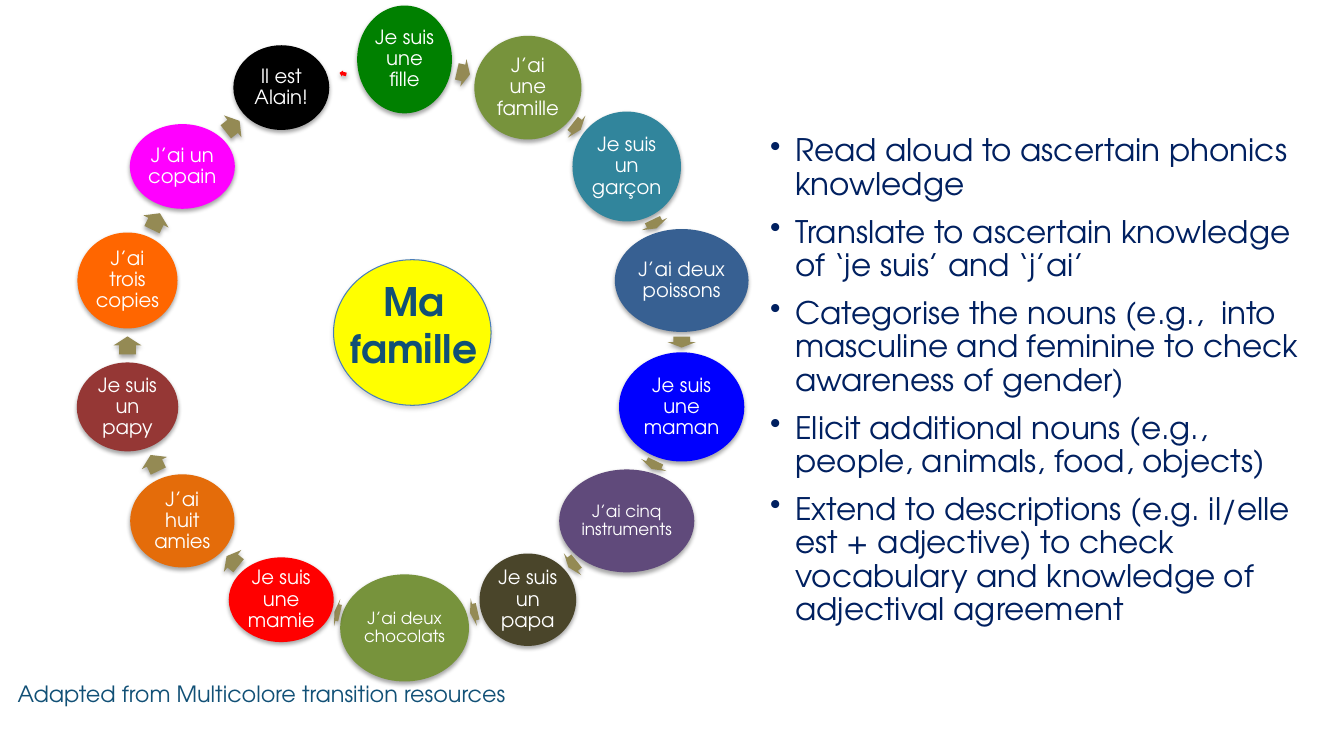
import math

import pptx
import pptx.dml.color
import pptx.enum.shapes
import pptx.enum.text
import pptx.oxml
import pptx.oxml.ns
import pptx.util

Pt = pptx.util.Pt
RGBColor = pptx.dml.color.RGBColor
SHAPE = pptx.enum.shapes.MSO_SHAPE
ALIGN = pptx.enum.text.PP_ALIGN
ANCHOR = pptx.enum.text.MSO_ANCHOR

FONT = "TeX Gyre Adventor"
WHITE = RGBColor(0xFF, 0xFF, 0xFF)
BLACK = RGBColor(0x00, 0x00, 0x00)
GREY = RGBColor(0x80, 0x80, 0x80)
YELLOW = RGBColor(0xFF, 0xFF, 0x00)
OUTLINE = RGBColor(0x4A, 0x7E, 0xBB)
TEAL = RGBColor(0x11, 0x50, 0x76)
NAVY = RGBColor(0x00, 0x20, 0x60)
KHAKI = RGBColor(0x94, 0x8A, 0x54)
RED = RGBColor(0xFF, 0x00, 0x00)
GREEN = RGBColor(0x00, 0x80, 0x00)
OLIVE = RGBColor(0x77, 0x93, 0x3C)
AQUA = RGBColor(0x31, 0x85, 0x9C)
STEEL = RGBColor(0x37, 0x60, 0x92)
BLUE = RGBColor(0x00, 0x00, 0xFF)
PURPLE = RGBColor(0x60, 0x4A, 0x7B)
DARK_TAN = RGBColor(0x4A, 0x45, 0x2A)
AMBER = RGBColor(0xE4, 0x6C, 0x0A)
BRICK = RGBColor(0x95, 0x37, 0x35)
ORANGE = RGBColor(0xFF, 0x66, 0x00)
MAGENTA = RGBColor(0xFF, 0x00, 0xFF)

# Clockwise from the top: phrase, fill, width, height, text size
PHRASES = [
    ("Je suis une fille", GREEN, 67.7, 77, 14),
    ("J’ai une famille", OLIVE, 76.5, 74, 14),
    ("Je suis un garçon", AQUA, 77.5, 78.5, 14),
    ("J’ai deux poissons", STEEL, 95.5, 73.5, 14),
    ("Je suis une maman", BLUE, 89.5, 78, 14),
    ("J’ai cinq instruments", PURPLE, 96.5, 73.5, 12),
    ("Je suis un papa", DARK_TAN, 69, 66, 14),
    ("J’ai deux chocolats", OLIVE, 92, 76.5, 12),
    ("Je suis une mamie", RED, 75, 60.5, 14),
    ("J’ai huit amies", AMBER, 74.5, 66.5, 14),
    ("Je suis un papy", BRICK, 72.5, 63.5, 14),
    ("J’ai trois copies", ORANGE, 71.5, 68.5, 14),
    ("J’ai un copain", MAGENTA, 75, 60.5, 14),
    ("Il est Alain!", BLACK, 68.5, 60.5, 14),
]
TASKS = [
    "Read aloud to ascertain phonics knowledge",
    "Translate to ascertain knowledge of ‘je suis’ and ‘j’ai’",
    "Categorise the nouns (e.g.,  into masculine and feminine to check "
    "awareness of gender)",
    "Elicit additional nouns (e.g., people, animals, food, objects)",
    "Extend to descriptions (e.g. il/elle est + adjective) to check "
    "vocabulary and knowledge of adjectival agreement",
]
RING_X, RING_Y, RING_RADIUS = 289, 245.5, 203


class FamilySlide:
    def __init__(self, slide):
        self.shapes = slide.shapes

    def set_text(self, paragraph, text, size, color, bold=False):
        paragraph.text = text
        font = paragraph.font
        font.name, font.size, font.bold = FONT, Pt(size), bold
        font.color.rgb = color

    def shadowed(self, kind, center_x, center_y, width, height, fill, shade=BLACK):
        shape = self.shapes.add_shape(
            kind, Pt(center_x - width / 2), Pt(center_y - height / 2),
            Pt(width), Pt(height))
        shape.fill.solid()
        shape.fill.fore_color.rgb = fill
        shape.line.fill.background()
        shape.shadow.inherit = False
        effects = shape._element.spPr.find(pptx.oxml.ns.qn("a:effectLst"))
        effects.append(pptx.oxml.parse_xml(
            f'<a:outerShdw {pptx.oxml.ns.nsdecls("a")} blurRad="{Pt(3.1)}" '
            f'dist="{Pt(1.8)}" dir="5400000" rotWithShape="0">'
            f'<a:srgbClr val="{shade}"><a:alpha val="35000"/></a:srgbClr>'
            '</a:outerShdw>'))
        return shape

    def bubble(self, center, text, fill, width, height, size):
        frame = self.shadowed(SHAPE.OVAL, *center, width, height, fill).text_frame
        frame.word_wrap = True
        frame.vertical_anchor = ANCHOR.MIDDLE
        frame.margin_left = frame.margin_right = Pt(1.4)
        frame.margin_top = frame.margin_bottom = Pt(1.4)
        phrase = frame.paragraphs[0]
        phrase.alignment = ALIGN.CENTER
        phrase.line_spacing = 0.9
        self.set_text(phrase, text, size, WHITE)

    def arrow(self, center, length, breadth, rotation, fill):
        arrow = self.shadowed(SHAPE.RIGHT_ARROW, *center, length, breadth, fill)
        arrow.adjustments[0] = 0.6
        arrow.adjustments[1] = 0.5
        arrow.rotation = rotation

    def text_box(self, left, top, width, height):
        frame = self.shapes.add_textbox(
            Pt(left), Pt(top), Pt(width), Pt(height)).text_frame
        frame.word_wrap = True
        return frame

    def bullets(self, frame, items, size, color):
        for number, item in enumerate(items):
            task = frame.add_paragraph() if number else frame.paragraphs[0]
            task.line_spacing = 0.9
            if number:
                task.space_before = Pt(10)
            properties = task._p.get_or_add_pPr()
            properties.set("marL", str(Pt(18)))
            properties.set("indent", str(Pt(-18)))
            properties.append(pptx.oxml.parse_xml(
                f'<a:buChar {pptx.oxml.ns.nsdecls("a")} char="•"/>'))
            self.set_text(task, item, size, color)


def ring_point(angle):
    return (RING_X + RING_RADIUS * math.sin(angle),
            RING_Y - RING_RADIUS * math.cos(angle))


def reach(width, height, angle):
    """Distance from the centre of an ellipse to its edge at an angle."""
    return 0.5 / math.hypot(math.cos(angle) / width, math.sin(angle) / height)


def draw_ring(page):
    step = math.tau / len(PHRASES)
    last = len(PHRASES) - 1
    for place, (text, fill, width, height, size) in enumerate(PHRASES):
        page.bubble(ring_point(place * step), text, fill, width, height, size)

        # Each arrow sits in the middle of the gap to the next bubble.
        heading = (place + 0.5) * step
        _, _, next_width, next_height, _ = PHRASES[(place + 1) % len(PHRASES)]
        near = reach(width, height, heading)
        far = reach(next_width, next_height, heading)
        chord = 2 * RING_RADIUS * math.sin(step / 2)
        along = (near - far) / 2
        middle = RING_RADIUS * math.cos(step / 2)
        center = (
            RING_X + middle * math.sin(heading) + along * math.cos(heading),
            RING_Y - middle * math.cos(heading) + along * math.sin(heading))
        if place == last:
            page.arrow(center, 5, 4.3, 192.86, RED)
        else:
            page.arrow(center, 0.53 * (chord - near - far), 20,
                       math.degrees(heading), KHAKI)


def main():
    deck = pptx.Presentation()
    deck.slide_width, deck.slide_height = Pt(960), Pt(540)
    page = FamilySlide(deck.slides.add_slide(deck.slide_layouts[6]))

    hub = page.shadowed(SHAPE.OVAL, 294.5, 237.5, 112.5, 104, YELLOW, GREY)
    hub.line.color.rgb = OUTLINE
    hub.line.width = Pt(0.75)
    title = page.text_box(227, 182, 137, 99.5)
    title.vertical_anchor = ANCHOR.MIDDLE
    title.paragraphs[0].alignment = ALIGN.CENTER
    page.set_text(title.paragraphs[0], "Ma famille", 28, TEAL, bold=True)

    draw_ring(page)
    page.bullets(page.text_box(543, 93, 403, 379.5), TASKS, 22.2, NAVY)
    credit = page.text_box(5.5, 482.5, 368, 26.5)
    page.set_text(credit.paragraphs[0],
                  "Adapted from Multicolore transition resources", 16, TEAL)
    deck.save("out.pptx")


if __name__ == "__main__":
    main()
